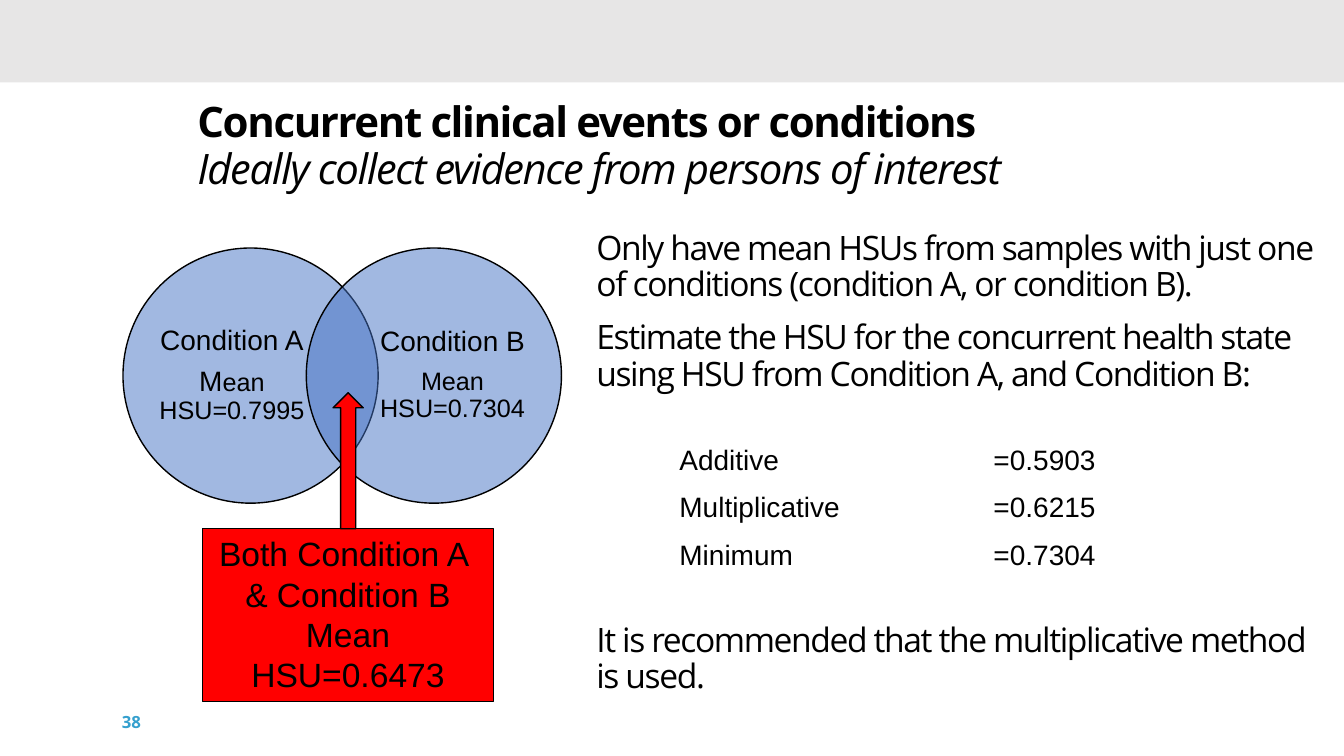
import dataclasses
from typing import Any

import lxml.etree
import pptx
import pptx.dml.color
import pptx.enum.shapes
import pptx.enum.text
import pptx.oxml
import pptx.oxml.ns
import pptx.util

Cm = pptx.util.Cm
Pt = pptx.util.Pt
Align = pptx.enum.text.PP_ALIGN
Anchor = pptx.enum.text.MSO_ANCHOR
Preset = pptx.enum.shapes.MSO_SHAPE
qn = pptx.oxml.ns.qn

BLACK, WHITE, RED = "000000", "FFFFFF", "FF0000"
BAND_GREY, VENN_BLUE, NUMBER_BLUE = "E7E6E6", "4472C4", "35A0CE"
INSETS = ("margin_left", "margin_right", "margin_top", "margin_bottom")


@dataclasses.dataclass
class Box:
    left: float
    top: float
    width: float
    height: float

    def lengths(self) -> tuple:
        return tuple(Cm(value) for value in dataclasses.astuple(self))


@dataclasses.dataclass
class Run:
    text: str
    size: float
    font: str = "Arial"
    color: str = BLACK
    bold: bool = False
    italic: bool = False
    spacing: float = 0


@dataclasses.dataclass
class Paragraph:
    runs: list[Run]
    layout: dict[str, Any] = dataclasses.field(default_factory=dict)


@dataclasses.dataclass
class Figure:
    preset: Any
    box: Box
    fill: str
    line_width: float = 0
    opacity: int = 100
    rotation: float = 0


@dataclasses.dataclass
class Condition:
    circle_left: float
    label_left: float
    name: str
    value_runs: list[Run]


def apply_format(target: Any, values: dict[str, Any]) -> None:
    for name, value in values.items():
        setattr(target, name, value)


def set_color(color_format: Any, color: str) -> None:
    color_format.rgb = pptx.dml.color.RGBColor.from_string(color)


def write_text(frame: Any, paragraphs: list[Paragraph], layout: dict[str, Any]) -> None:
    apply_format(frame, {"word_wrap": True, **layout})
    for index, content in enumerate(paragraphs):
        paragraph = frame.add_paragraph() if index else frame.paragraphs[0]
        apply_format(paragraph, content.layout)
        for item in content.runs:
            run = paragraph.add_run()
            run.text = item.text
            apply_format(run.font, {"name": item.font, "size": Pt(item.size),
                                    "bold": item.bold, "italic": item.italic})
            set_color(run.font.color, item.color)
            if item.spacing:
                run.font._element.set("spc", str(round(item.spacing * 100)))


def add_text(slide: Any, box: Box, paragraphs: list[Paragraph], layout: dict[str, Any]) -> None:
    write_text(slide.shapes.add_textbox(*box.lengths()).text_frame, paragraphs, layout)


def add_figure(slide: Any, figure: Figure) -> Any:
    shape = slide.shapes.add_shape(figure.preset, *figure.box.lengths())
    shape.shadow.inherit = False
    shape.rotation = figure.rotation
    shape.fill.solid()
    set_color(shape.fill.fore_color, figure.fill)
    if figure.opacity < 100:
        color = shape._element.spPr.find(qn("a:solidFill"))[0]
        lxml.etree.SubElement(color, qn("a:alpha")).set("val", str(figure.opacity * 1000))
    if figure.line_width:
        set_color(shape.line.color, BLACK)
        shape.line.width = Pt(figure.line_width)
    else:
        shape.line.fill.background()
    return shape


def add_borders(cell: Any, color: str, width: float) -> None:
    properties = cell._tc.get_or_add_tcPr()
    for side in ("lnL", "lnR", "lnT", "lnB"):
        line = lxml.etree.SubElement(properties, qn(f"a:{side}"), w=str(Pt(width)))
        fill = lxml.etree.SubElement(line, qn("a:solidFill"))
        lxml.etree.SubElement(fill, qn("a:srgbClr"), val=color)


def add_estimates(slide: Any, rows: list[tuple[str, str]]) -> None:
    widths, row_height = (6.81, 4.85), 1.19
    box = Box(17.09, 10.82, sum(widths), row_height * len(rows))
    table = slide.shapes.add_table(len(rows), len(widths), *box.lengths()).table
    apply_format(table, {"first_row": False, "horz_banding": False})
    for column, width in zip(table.columns, widths):
        column.width = Cm(width)
    cell_layout = {**dict.fromkeys(INSETS, Cm(0.03)), "margin_bottom": 0,
                   "vertical_anchor": Anchor.BOTTOM}
    for row, texts in zip(table.rows, rows):
        row.height = Cm(row_height)
        for cell, text, alignment in zip(row.cells, texts, (Align.LEFT, Align.CENTER)):
            add_borders(cell, WHITE, 1)
            cell.fill.background()
            apply_format(cell, cell_layout)
            write_text(cell.text_frame, [Paragraph([Run(text, 20)], {"alignment": alignment})], {})


def add_condition(slide: Any, condition: Condition) -> None:
    """Draw one translucent circle of the Venn diagram with its label."""
    circle = Box(condition.circle_left, 6.25, 6.43, 6.43)
    add_figure(slide, Figure(Preset.OVAL, circle, VENN_BLUE, 1, opacity=50))
    layout = {"alignment": Align.CENTER, "line_spacing": 0.9, "space_after": Pt(8)}
    add_text(slide, Box(condition.label_left, 7.01, 3.71, 4.9),
             [Paragraph([Run(condition.name, 20)], layout),
              Paragraph(condition.value_runs, layout)],
             {**dict.fromkeys(INSETS, 0), "vertical_anchor": Anchor.MIDDLE})


def add_title(slide: Any) -> None:
    title = slide.shapes.title
    box = Box(4.72, 2.34, 25.86, 2.57)
    apply_format(title, dict(zip(("left", "top", "width", "height"), box.lengths())))
    layout = {"alignment": Align.LEFT, "line_spacing": Pt(34), "space_before": Pt(0)}
    heading = Run("Concurrent clinical events or conditions", 30, "Open Sans", bold=True, spacing=-1)
    subheading = Run("Ideally collect evidence from persons of interest", 30, "Open Sans",
                     italic=True, spacing=-1)
    write_text(title.text_frame, [Paragraph([run], layout) for run in (heading, subheading)],
               {"vertical_anchor": Anchor.TOP, "auto_size": pptx.enum.text.MSO_AUTO_SIZE.NONE})


def add_explanation(slide: Any) -> None:
    layout = {"line_spacing": Pt(26), "space_after": Pt(12)}
    statements = [
        ("Only have mean HSUs from samples with just one of conditions "
         "(condition A, or condition B).", 0),
        ("Estimate the HSU for the concurrent health state using HSU from Condition A, "
         "and Condition B:", 0),
        ("It is recommended that the multiplicative method is used.", 152),
    ]
    paragraphs = [Paragraph([Run(text, 24, "Open Sans", spacing=-1)],
                            {**layout, "space_before": Pt(before)})
                  for text, before in statements]
    add_text(slide, Box(14.78, 5.69, 18.62, 12.52), paragraphs, {})


def main() -> None:
    presentation = pptx.Presentation()
    apply_format(presentation, {"slide_width": Cm(33.87), "slide_height": Cm(19.05)})
    slide = presentation.slides.add_slide(presentation.slide_layouts[5])

    add_figure(slide, Figure(Preset.RECTANGLE, Box(0, 0, 33.87, 2.08), BAND_GREY))
    add_text(slide, Box(2.82, 17.68, 2.74, 1.02),
             [Paragraph([Run("38", 12, "Open Sans", NUMBER_BLUE, bold=True)])],
             {"vertical_anchor": Anchor.MIDDLE})
    add_title(slide)
    add_explanation(slide)

    for condition in (
        Condition(3.1, 3.99, "Condition A", [Run("M", 20), Run("ean HSU=0.7995", 18)]),
        Condition(7.72, 9.55, "Condition B", [Run("Mean HSU=0.7304", 18)]),
    ):
        add_condition(slide, condition)

    both = add_figure(slide, Figure(Preset.RECTANGLE, Box(5.11, 13.31, 7.32, 4.37), RED, 0.75))
    lines = ("Both Condition A ", "& Condition B", "Mean HSU=0.6473")
    write_text(both.text_frame,
               [Paragraph([Run(line, 24)], {"alignment": Align.CENTER}) for line in lines],
               {"vertical_anchor": Anchor.TOP})
    add_figure(slide, Figure(Preset.RIGHT_ARROW, Box(7.06, 11.23, 3.43, 0.76), RED, 1, rotation=270))

    add_estimates(slide, [("Additive", "=0.5903"), ("Multiplicative", "=0.6215"),
                          ("Minimum", "=0.7304")])
    presentation.save("out.pptx")


if __name__ == "__main__":
    main()
